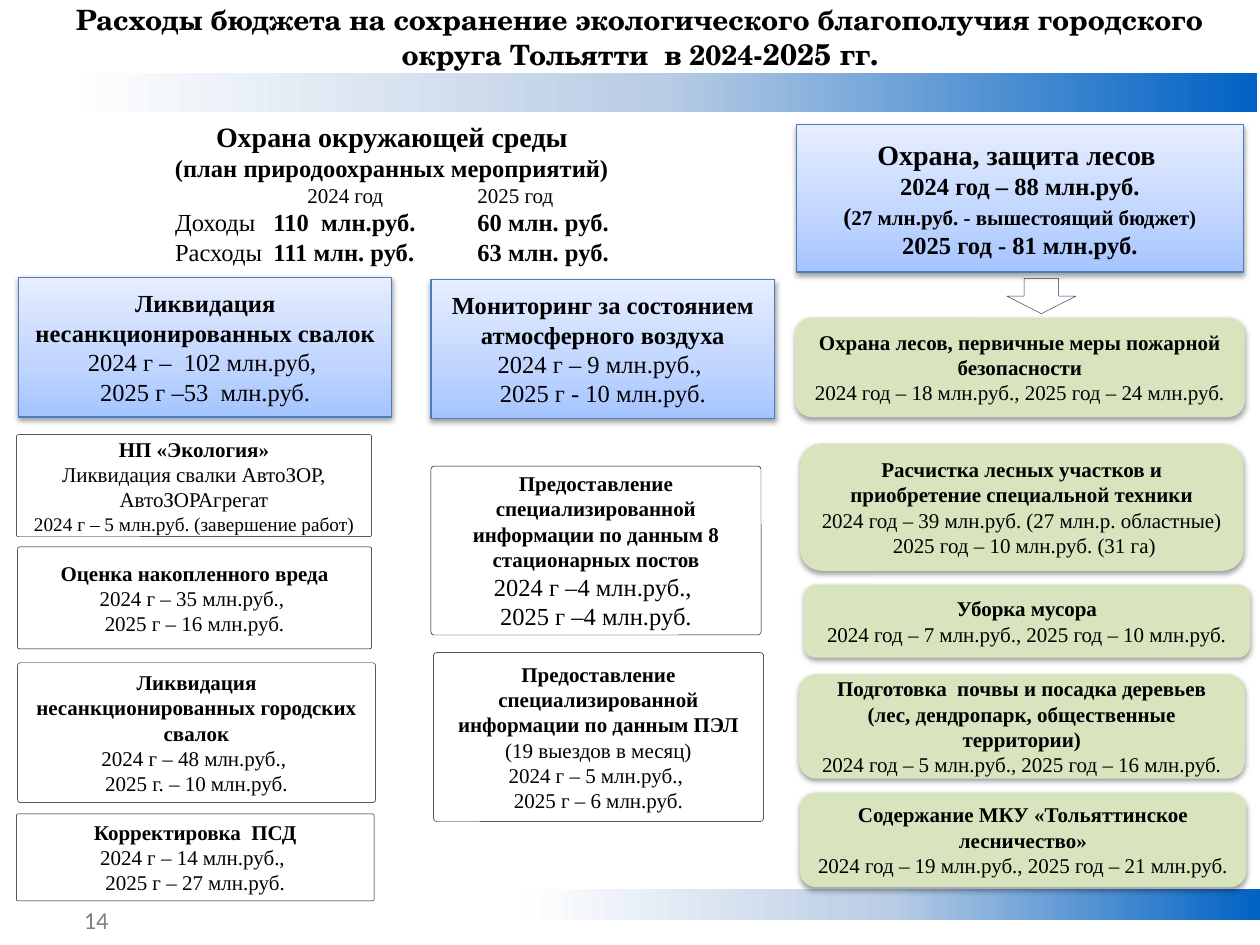
import pptx
import pptx.util
import pptx.dml.color
import pptx.enum.shapes
import pptx.enum.text
import pptx.oxml.ns
import lxml.etree

PX = 9144
KIND = pptx.enum.shapes.MSO_SHAPE
ALIGN = pptx.enum.text.PP_ALIGN
ANCHOR = pptx.enum.text.MSO_ANCHOR
SERIF = "Times New Roman"
BAND_STOPS = [(0, "0062C4"), (50, "B9CDE5"), (100, "FFFFFF")]
HEAD_STOPS = [(0, "A4C4FF"), (35, "BFD4FF"), (100, "E6EEFF")]


def color(value):
    return pptx.dml.color.RGBColor.from_string(value)


def emu(box):
    return [length * PX for length in box]


def add_node(parent, tag, **attributes):
    return lxml.etree.SubElement(parent, pptx.oxml.ns.qn(tag), attributes)


def add_color(parent, value):
    return add_node(parent, "a:srgbClr", val=value)


def style_font(font, size, bold, name=SERIF, ink="000000"):
    font.name = name
    font.size = pptx.util.Pt(size)
    font.bold = bold
    font.color.rgb = color(ink)


def write(frame, lines, name=SERIF, ink="000000", align=ALIGN.CENTER):
    frame.word_wrap = True
    frame.vertical_anchor = ANCHOR.MIDDLE
    for index, line in enumerate(lines):
        para = frame.paragraphs[0] if index == 0 else frame.add_paragraph()
        para.alignment = align
        if isinstance(line, tuple):
            text, size, bold = line
            para.text = text
            style_font(para.font, size, bold, name, ink)
            continue
        for text, size, bold in line:
            span = para.add_run()
            span.text = text
            style_font(span.font, size, bold, name, ink)


def set_tabs(para, stops):
    para.alignment = ALIGN.LEFT
    tabs = add_node(para._p.get_or_add_pPr(), "a:tabLst")
    for stop in stops:
        add_node(tabs, "a:tab", pos=str(stop * PX), algn="l")


def fill_gradient(shape, stops, angle):
    shape.fill.gradient()
    shape.fill.gradient_angle = angle
    stop_list = shape._element.spPr.find(".//" + pptx.oxml.ns.qn("a:gsLst"))
    for stop in list(stop_list):
        stop_list.remove(stop)
    for position, value in stops:
        add_color(add_node(stop_list, "a:gs", pos=str(position * 1000)), value)


def add_shadow(shape):
    effects = shape._element.spPr.find(pptx.oxml.ns.qn("a:effectLst"))
    shadow = add_node(effects, "a:outerShdw", blurRad="40000", dist="20000",
                      dir="5400000", rotWithShape="0")
    add_node(add_color(shadow, "000000"), "a:alpha", val="38000")


def add_box(page, kind, box, fill=None, line=None, width=0.25, corners=()):
    shape = page.shapes.add_shape(kind, *emu(box))
    shape.shadow.inherit = False
    for index, corner in enumerate(corners):
        shape.adjustments[index] = corner
    if fill:
        shape.fill.solid()
        shape.fill.fore_color.rgb = color(fill)
    else:
        shape.fill.background()
    if line:
        shape.line.color.rgb = color(line)
        shape.line.width = pptx.util.Pt(width)
    else:
        shape.line.fill.background()
    return shape


def add_band(page, box):
    fill_gradient(add_box(page, KIND.RECTANGLE, box), BAND_STOPS, 180)


def add_header(page, box, lines):
    shape = add_box(page, KIND.ROUND_2_DIAG_RECTANGLE, box,
                    line="4B7EBC", width=0.75, corners=(0, 0))
    fill_gradient(shape, HEAD_STOPS, 90)
    add_shadow(shape)
    write(shape.text_frame, lines)


def add_card(page, box, lines):
    shape = add_box(page, KIND.ROUNDED_RECTANGLE, box, "FFFFFF", "000000", corners=(0.02,))
    write(shape.text_frame, lines)


def add_green_card(page, box, lines):
    shape = add_box(page, KIND.ROUNDED_RECTANGLE, box, "D7E4BD")
    add_shadow(shape)
    write(shape.text_frame, lines)


def add_column(page, box, header, header_lines, cards, add_item):
    left, top, width, height = box
    add_header(page, (left + header[0], top, header[1], header[2]), header_lines)
    for (dx, dy, card_width, card_height), lines in cards:
        add_item(page, (left + dx, top + dy, card_width, card_height), lines)


def add_title(page, box):
    title = page.shapes.title
    title.left, title.top, title.width, title.height = emu(box)
    lines = [[("Расходы бюджета на сохранение экологического благополучия "
               "городского округа Тольятти  в 2024-", 16, True), ("2025 гг.", 17, True)]]
    write(title.text_frame, lines, "TeX Gyre Schola")
    title.text_frame.auto_size = pptx.enum.text.MSO_AUTO_SIZE.NONE
    title.text_frame.vertical_anchor = ANCHOR.TOP


def add_summary(page, box):
    shape = add_box(page, KIND.ROUND_2_DIAG_RECTANGLE, box, "FFFFFF", corners=(0.5, 0))
    write(shape.text_frame, [
        ("Охрана окружающей среды", 16, True),
        ("(план природоохранных мероприятий)", 14, True),
        ("\t2024 год\t2025 год", 12, False),
        [("\tДоходы", 14, False), ("\t110  млн.руб.\t60 млн. руб.", 14, True)],
        [("\tРасходы", 14, False), ("\t111 млн. руб.\t63 млн. руб.", 14, True)],
    ])
    paras = shape.text_frame.paragraphs
    set_tabs(paras[2], (191, 326))
    for para in paras[3:]:
        set_tabs(para, (86, 164, 326))


def add_page_number(page, box):
    number = page.shapes.add_textbox(*emu(box))
    write(number.text_frame, [("14", 13.9, False)], "Calibri", "808080", ALIGN.RIGHT)


def entry(heading, *details):
    return [(heading, 12, True)] + [(detail, 12, False) for detail in details]


def add_dumps(page, box):
    add_column(page, box, (2, 296, 111), [
        ("Ликвидация несанкционированных свалок", 14, True),
        ("2024 г –  102 млн.руб, ", 14, False), ("2025 г –53  млн.руб.", 14, False),
    ], [
        ((0, 125, 282, 81), entry("НП «Экология»", "Ликвидация свалки АвтоЗОР, АвтоЗОРАгрегат")
         + [("2024 г – 5 млн.руб. (завершение работ)", 11, False)]),
        ((1, 214, 281, 81), entry("Оценка накопленного вреда", "2024 г – 35 млн.руб., ", "2025 г – 16 млн.руб.")),
        ((1, 306, 284, 111), entry("Ликвидация несанкционированных городских свалок",
                                   "2024 г – 48 млн.руб., ", "2025 г. – 10 млн.руб.")),
        ((0, 426, 284, 69), entry("Корректировка  ПСД", "2024 г – 14 млн.руб., ", "2025 г – 27 млн.руб.")),
    ], add_card)


def add_air(page, box):
    add_column(page, box, (0, 273, 110), [
        ("Мониторинг за состоянием атмосферного воздуха", 14, True),
        ("2024 г – 9 млн.руб., ", 14, False), ("2025 г - 10 млн.руб.", 14, False),
    ], [
        ((0, 148, 262, 134), [
            ("Предоставление специализированной информации по данным 8 стационарных постов", 12, True),
            ("2024 г –4 млн.руб., ", 14, False), ("2025 г –4 млн.руб.", 14, False)]),
        ((2, 296, 262, 134), [
            [("Предоставление специализированной информации по данным ПЭЛ ", 12, True),
             ("(19 выездов в месяц)", 12, False)],
            ("2024 г – 5 млн.руб., ", 12, False), ("2025 г – 6 млн.руб.", 12, False)]),
    ], add_card)


def add_forest(page, box):
    left, top = box[:2]
    add_column(page, box, (1, 355, 117), [
        ("Охрана, защита лесов ", 16, True), ("2024 год – 88 млн.руб.", 14, True),
        [("(", 14, True), ("27 млн.руб. - вышестоящий бюджет)", 12, True)],
        ("2025 год - 81 млн.руб.", 14, True),
    ], [
        ((0, 153, 357, 79), entry("Охрана лесов, первичные меры пожарной безопасности",
                                  "2024 год – 18 млн.руб., 2025 год – 24 млн.руб.")),
        ((4, 253, 352, 101), entry("Расчистка лесных участков и приобретение специальной техники",
                                   "2024 год – 39 млн.руб. (27 млн.р. областные)",
                                   " 2025 год – 10 млн.руб. (31 га)")),
        ((7, 365, 354, 58), entry("Уборка мусора", "2024 год – 7 млн.руб., 2025 год – 10 млн.руб.")),
        ((3, 436, 354, 83), entry("Подготовка  почвы и посадка деревьев (лес, дендропарк, общественные территории)",
                                  "2024 год – 5 млн.руб., 2025 год – 16 млн.руб.")),
        ((4, 530, 354, 75), entry("Содержание МКУ «Тольяттинское лесничество»",
                                  "2024 год – 19 млн.руб., 2025 год – 21 млн.руб.")),
    ], add_green_card)
    add_box(page, KIND.DOWN_ARROW, (left + 168, top + 122, 55, 28), line="233953")


def main():
    deck = pptx.Presentation()
    deck.slide_width, deck.slide_height = emu((1000, 750))
    page = deck.slides.add_slide(deck.slide_layouts[5])
    add_page_number(page, (33, 715, 63, 30))
    add_band(page, (413, 706, 587, 24))
    add_band(page, (49, 58, 949, 31))
    add_title(page, (10, -3, 996, 67))
    add_summary(page, (27, 98, 568, 110))
    add_dumps(page, (13, 220, 298, 495))
    add_air(page, (342, 222, 273, 430))
    add_forest(page, (631, 99, 361, 605))
    deck.save("out.pptx")


if __name__ == "__main__":
    main()
